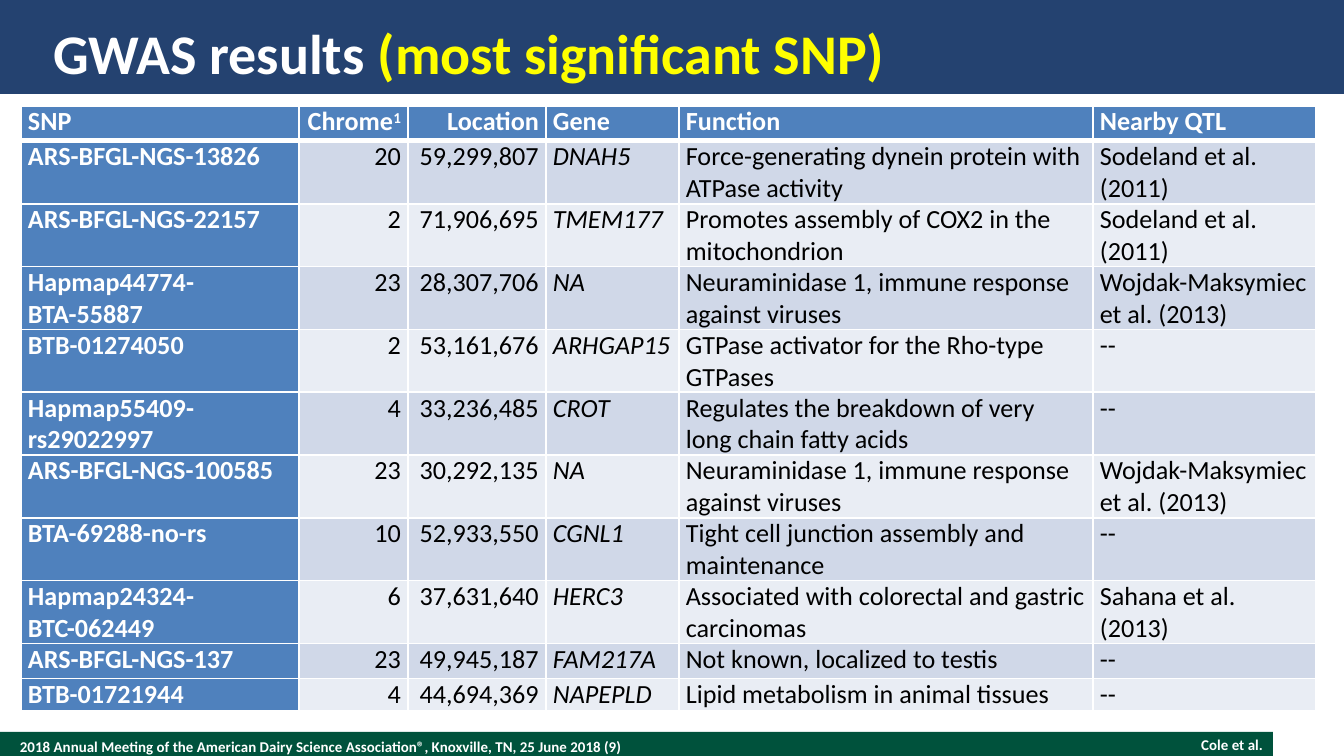
from dataclasses import dataclass

import pptx
import pptx.dml.color
import pptx.enum.shapes
import pptx.enum.text
import pptx.oxml
import pptx.oxml.ns
import pptx.util

LEFT = pptx.enum.text.PP_ALIGN.LEFT
RIGHT = pptx.enum.text.PP_ALIGN.RIGHT
MIDDLE = pptx.enum.text.MSO_ANCHOR.MIDDLE
RECTANGLE = pptx.enum.shapes.MSO_SHAPE.RECTANGLE
SLIDE_WIDTH, SLIDE_HEIGHT = 1344, 756


@dataclass(frozen=True)
class Theme:
    font: str = "Calibri"
    white: str = "FFFFFF"
    black: str = "000000"
    navy: str = "244270"
    green: str = "00523C"
    yellow: str = "FFFF00"
    header: str = "4F81BD"
    bands: tuple = ("D0D8E8", "E9EDF4")
    title_size: int = 30
    table_size: int = 14
    footer_size: int = 8
    rule: int = 1
    header_rule: int = 3


def px(length):
    return pptx.util.Emu(round(length * 9144000 / SLIDE_WIDTH))


def rgb(color):
    return pptx.dml.color.RGBColor.from_string(color)


class SlideBuilder:
    """Draws styled elements on one slide."""

    def __init__(self, slide, theme):
        self.slide = slide
        self.theme = theme

    def bar(self, left, top, width, height, color):
        shape = self.slide.shapes.add_shape(RECTANGLE, px(left), px(top), px(width), px(height))
        shape.shadow.inherit = False
        shape.fill.solid()
        shape.fill.fore_color.rgb = rgb(color)
        shape.line.fill.background()

    def run(self, paragraph, text, size, color, bold=True, italic=False, superscript=False):
        run = paragraph.add_run()
        run.text = text
        run.font.name = self.theme.font
        run.font.size = pptx.util.Pt(size)
        run.font.bold = bold
        run.font.italic = italic
        run.font.color.rgb = rgb(color)
        if superscript:
            run._r.get_or_add_rPr().set("baseline", "30000")

    def text(self, left, top, width, height, runs, size, alignment=LEFT):
        shape = self.slide.shapes.add_textbox(px(left), px(top), px(width), px(height))
        frame = shape.text_frame
        frame.word_wrap = True
        frame.vertical_anchor = MIDDLE
        frame.margin_left = frame.margin_right = frame.margin_top = frame.margin_bottom = 0
        paragraph = frame.paragraphs[0]
        paragraph.alignment = alignment
        for text, color in runs:
            self.run(paragraph, text, size, color)

    def borders(self, cell, top, bottom):
        properties = cell._tc.get_or_add_tcPr()
        sides = {"L": self.theme.rule, "R": self.theme.rule, "T": top, "B": bottom}
        for side, points in sides.items():
            properties.append(pptx.oxml.parse_xml(
                f'<a:ln{side} {pptx.oxml.ns.nsdecls("a")} w="{pptx.util.Pt(points)}">'
                f'<a:solidFill><a:srgbClr val="{self.theme.white}"/></a:solidFill></a:ln{side}>'
            ))

    def cell(self, cell, text, row, column):
        theme = self.theme
        emphasized = row == 0 or column == 0
        self.borders(
            cell,
            theme.header_rule if row == 1 else theme.rule,
            theme.header_rule if row == 0 else theme.rule,
        )
        cell.fill.solid()
        cell.fill.fore_color.rgb = rgb(theme.header if emphasized else theme.bands[(row - 1) % 2])
        cell.margin_left = cell.margin_right = px(7)
        cell.margin_top = cell.margin_bottom = 0
        paragraph = cell.text_frame.paragraphs[0]
        paragraph.alignment = RIGHT if column in (1, 2) else LEFT
        color = theme.white if emphasized else theme.black
        body, mark, note = text.partition("^")
        self.run(paragraph, body, theme.table_size, color, emphasized, row > 0 and column == 3)
        if mark:
            self.run(paragraph, note, theme.table_size, color, emphasized, superscript=True)

    def table(self, left, top, widths, heights, rows):
        frame = self.slide.shapes.add_table(
            len(rows), len(widths), px(left), px(top), px(sum(widths)), px(sum(heights)))
        table = frame.table
        for column, width in zip(table.columns, widths):
            column.width = px(width)
        for row, height in zip(table.rows, heights):
            row.height = px(height)
        for row, values in enumerate(rows):
            for column, text in enumerate(values):
                self.cell(table.cell(row, column), text, row, column)


COLUMN_WIDTHS = [278, 109, 138, 133, 414, 223]
ROW_HEIGHTS = [35] + [61] * 8 + [35, 32]
NEURAMINIDASE = "Neuraminidase 1, immune response against viruses"
SODELAND = "Sodeland et al. (2011)"
WOJDAK = "Wojdak-Maksymiec et al. (2013)"
RESULTS = [
    ("SNP", "Chrome^1", "Location", "Gene", "Function", "Nearby QTL"),
    ("ARS-BFGL-NGS-13826", "20", "59,299,807", "DNAH5",
     "Force-generating dynein protein with ATPase activity", SODELAND),
    ("ARS-BFGL-NGS-22157", "2", "71,906,695", "TMEM177",
     "Promotes assembly of COX2 in the mitochondrion", SODELAND),
    ("Hapmap44774-BTA-55887", "23", "28,307,706", "NA", NEURAMINIDASE, WOJDAK),
    ("BTB-01274050", "2", "53,161,676", "ARHGAP15",
     "GTPase activator for the Rho-type GTPases", "--"),
    ("Hapmap55409-rs29022997", "4", "33,236,485", "CROT",
     "Regulates the breakdown of very long chain fatty acids", "--"),
    ("ARS-BFGL-NGS-100585", "23", "30,292,135", "NA", NEURAMINIDASE, WOJDAK),
    ("BTA-69288-no-rs", "10", "52,933,550", "CGNL1",
     "Tight cell junction assembly and maintenance", "--"),
    ("Hapmap24324-BTC-062449", "6", "37,631,640", "HERC3",
     "Associated with colorectal and gastric carcinomas", "Sahana et al. (2013)"),
    ("ARS-BFGL-NGS-137", "23", "49,945,187", "FAM217A", "Not known, localized to testis", "--"),
    ("BTB-01721944", "4", "44,694,369", "NAPEPLD", "Lipid metabolism in animal tissues", "--"),
]
MEETING = ("2018 Annual Meeting of the American Dairy Science Association®, "
           "Knoxville, TN, 25 June 2018 (9)")


def main():
    theme = Theme()
    presentation = pptx.Presentation()
    presentation.slide_width = px(SLIDE_WIDTH)
    presentation.slide_height = px(SLIDE_HEIGHT)
    slide = presentation.slides.add_slide(presentation.slide_layouts[6])
    builder = SlideBuilder(slide, theme)
    builder.bar(0, 732, 1273, 27, theme.green)
    builder.bar(0, 0, SLIDE_WIDTH, 94, theme.navy)
    builder.text(20, 733, 874, 27, [(MEETING, theme.white)], theme.footer_size)
    builder.text(968, 736, 295, 18, [("Cole et al.", theme.white)], theme.footer_size, RIGHT)
    builder.text(
        53, 17, 1238, 70,
        [("GWAS results ", theme.white), ("(most significant SNP)", theme.yellow)],
        theme.title_size,
    )
    builder.table(21, 106, COLUMN_WIDTHS, ROW_HEIGHTS, RESULTS)
    presentation.save("out.pptx")


if __name__ == "__main__":
    main()
